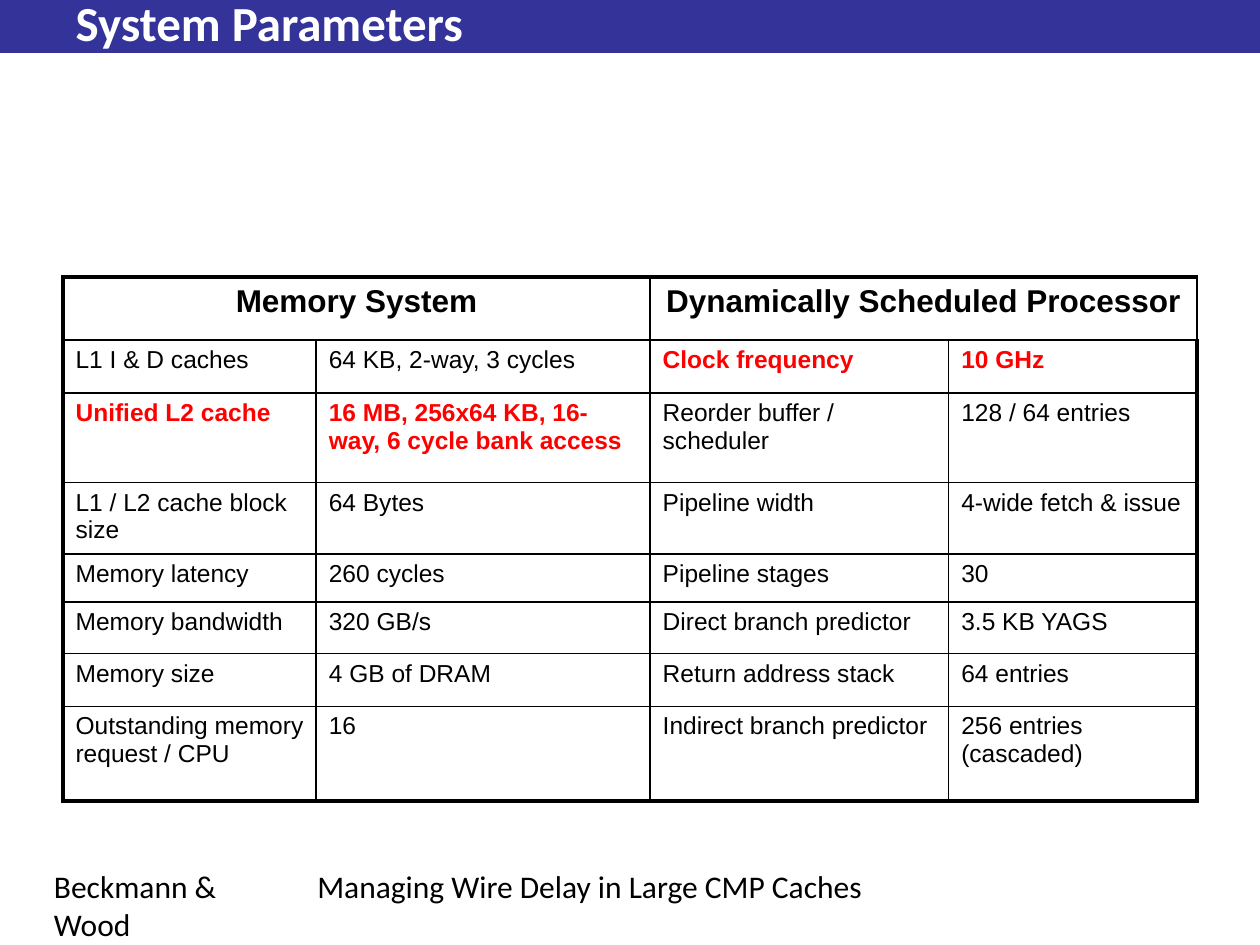
from pptx import Presentation
from pptx.dml.color import RGBColor
from pptx.enum.shapes import MSO_SHAPE as Shape
from pptx.enum.text import MSO_ANCHOR as Anchor, PP_ALIGN as Align
from pptx.oxml.ns import qn
from pptx.util import Inches, Pt
from lxml.etree import SubElement

BLUE = RGBColor(0x33, 0x33, 0x99)
WHITE = RGBColor(0xFF, 0xFF, 0xFF)
BLACK = RGBColor(0, 0, 0)
RED = RGBColor(0xFF, 0, 0)

TITLE = {"name": "Calibri", "size": Pt(28), "bold": True}
FOOTER = {"name": "Calibri", "size": Pt(18), "bold": False}
HEADING = {"name": "Arial", "size": Pt(18), "bold": True}
BODY = {"name": "Arial", "size": Pt(14), "bold": False}
KEY = {"name": "Arial", "size": Pt(14), "bold": True}


def write(frame, text, style, color, align=Align.LEFT):
    para = frame.paragraphs[0]
    para.alignment = align
    span = para.add_run()
    span.text = text
    for name, value in style.items():
        setattr(span.font, name, value)
    span.font.color.rgb = color


def add_border(cell, side, points):
    line = SubElement(cell._tc.get_or_add_tcPr(), qn(f"a:ln{side}"), w=str(Pt(points)))
    fill = SubElement(line, qn("a:solidFill"))
    SubElement(fill, qn("a:srgbClr"), val=str(BLACK))


deck = Presentation()
deck.slide_width, deck.slide_height = Inches(10), Inches(7.5)
page = deck.slides.add_slide(deck.slide_layouts[5])

bar = page.shapes.add_shape(Shape.RECTANGLE, 0, 0, Inches(10), Inches(0.42))
bar.shadow.inherit = False
bar.fill.solid()
bar.fill.fore_color.rgb = BLUE
bar.line.fill.background()
page.shapes._spTree.insert(2, bar._element)

title = page.shapes.title
title.left, title.top = Inches(0.5), Inches(-0.08)
title.width, title.height = Inches(9), Inches(0.5)
title.text_frame.vertical_anchor = Anchor.MIDDLE
write(title.text_frame, "System Parameters", TITLE, WHITE)

footers = [
    ("Beckmann & Wood", 0.33, 1.92),
    ("Managing Wire Delay in Large CMP Caches", 2.42, 5.17),
]
for text, left, width in footers:
    box = page.shapes.add_textbox(Inches(left), Inches(6.83), Inches(width), Inches(0.52))
    box.text_frame.word_wrap = True
    write(box.text_frame, text, FOOTER, BLACK)

headings = ["Memory System", "Dynamically Scheduled Processor"]
parameters = [
    ["L1 I & D caches", "64 KB, 2-way, 3 cycles", "Clock frequency", "10 GHz"],
    ["Unified L2 cache", "16 MB, 256x64 KB, 16-way, 6 cycle bank access",
     "Reorder buffer / scheduler", "128 / 64 entries"],
    ["L1 / L2 cache block size", "64 Bytes", "Pipeline width", "4-wide fetch & issue"],
    ["Memory latency", "260 cycles", "Pipeline stages", "30"],
    ["Memory bandwidth", "320 GB/s", "Direct branch predictor", "3.5 KB YAGS"],
    ["Memory size", "4 GB of DRAM", "Return address stack", "64 entries"],
    ["Outstanding memory request / CPU", "16", "Indirect branch predictor",
     "256 entries (cascaded)"],
]
highlights = {(1, 2), (1, 3), (2, 0), (2, 1)}
column_widths = [2.01, 2.65, 2.37, 1.97]
row_heights = [0.5, 0.42, 0.71, 0.53, 0.38, 0.41, 0.42, 0.75]
last_row, last_column = len(row_heights) - 1, len(column_widths) - 1

table = page.shapes.add_table(
    len(row_heights), len(column_widths), Inches(0.5), Inches(2.2), Inches(9), Inches(4.12)
).table
table.first_row = table.horz_banding = False
for column, width in zip(table.columns, column_widths):
    column.width = Inches(width)
for row, height in zip(table.rows, row_heights):
    row.height = Inches(height)

for r in range(last_row + 1):
    for c in range(last_column + 1):
        cell = table.cell(r, c)
        outer = {"L": c == 0, "R": c == last_column, "T": r == 0, "B": r == last_row}
        for side, is_outer in outer.items():
            add_border(cell, side, 2.25 if is_outer else 1)
        cell.fill.background()

for index, heading in enumerate(headings):
    cell = table.cell(0, 2 * index)
    cell.merge(table.cell(0, 2 * index + 1))
    write(cell.text_frame, heading, HEADING, BLACK, Align.CENTER)

for r, values in enumerate(parameters, 1):
    for c, value in enumerate(values):
        style, color = (KEY, RED) if (r, c) in highlights else (BODY, BLACK)
        write(table.cell(r, c).text_frame, value, style, color)

deck.save("out.pptx")
